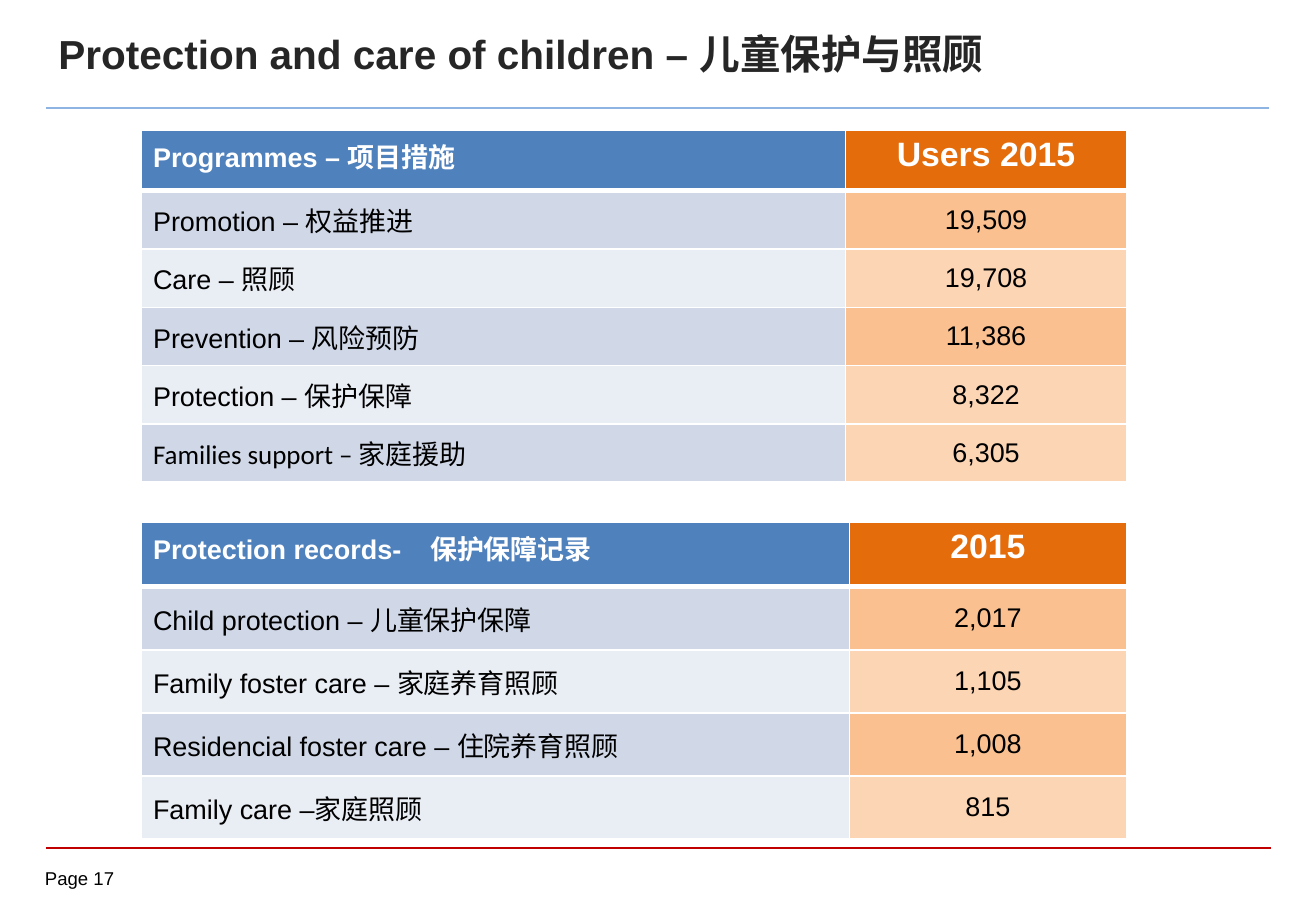
from lxml import etree
from pptx import Presentation
from pptx.dml.color import RGBColor
from pptx.enum import shapes, text
from pptx.oxml import ns
from pptx.util import Inches, Pt

WHITE = RGBColor(0xFF, 0xFF, 0xFF)
BLACK = RGBColor(0, 0, 0)
TITLE_GREY = RGBColor(0x26, 0x26, 0x26)
RED = RGBColor(0xC0, 0, 0)
LIGHT_BLUE = RGBColor(0x8E, 0xB4, 0xE3)
BLUE = RGBColor(0x4F, 0x81, 0xBD)
ORANGE = RGBColor(0xE4, 0x6C, 0x0A)
BLUE_BANDS = (RGBColor(0xD0, 0xD8, 0xE8), RGBColor(0xE9, 0xED, 0xF4))
DARK_PEACH = RGBColor(0xFA, 0xC0, 0x90)
PALE_PEACH = RGBColor(0xFC, 0xD5, 0xB5)
PEACH_BANDS = (DARK_PEACH, PALE_PEACH, DARK_PEACH, PALE_PEACH, PALE_PEACH)

PROGRAMMES = [
    ("Programmes – 项目措施", "Users 2015"),
    ("Promotion – 权益推进", "19,509"),
    ("Care – 照顾", "19,708"),
    ("Prevention – 风险预防", "11,386"),
    ("Protection – 保护保障", "8,322"),
    ("Families support – 家庭援助", "6,305"),
]
RECORDS = [
    ("Protection records-\t保护保障记录", "2015"),
    ("Child protection – 儿童保护保障", "2,017"),
    ("Family foster care – 家庭养育照顾", "1,105"),
    ("Residencial foster care – 住院养育照顾", "1,008"),
    ("Family care –家庭照顾", "815"),
]


def write_text(frame, content, size=16, color=BLACK, bold=False, font="Arial",
               align=text.PP_ALIGN.LEFT, tab=None):
    paragraph = frame.paragraphs[0]
    paragraph.alignment = align
    if tab is not None:
        properties = paragraph._p.get_or_add_pPr()
        tabs = etree.SubElement(properties, ns.qn("a:tabLst"))
        etree.SubElement(tabs, ns.qn("a:tab"), pos=str(tab), algn="l")
    run = paragraph.add_run()
    run.text = content
    run.font.name = font
    run.font.size = Pt(size)
    run.font.bold = bold
    run.font.color.rgb = color


def add_rule(slide, right, top, color, width):
    line = slide.shapes.add_connector(
        shapes.MSO_CONNECTOR.STRAIGHT,
        Inches(0.38), Inches(top), Inches(right), Inches(top))
    line.line.color.rgb = color
    line.line.width = Pt(width)
    etree.SubElement(line._element.spPr, ns.qn("a:effectLst"))


def add_title(slide, content):
    title = slide.shapes.title
    title.left, title.top = Inches(0.38), Inches(0.19)
    title.width, title.height = Inches(8.11), Inches(0.71)
    title.text_frame.vertical_anchor = text.MSO_ANCHOR.TOP
    write_text(title.text_frame, content, size=24, color=TITLE_GREY, bold=True)


def add_page_label(slide, content):
    label = slide.shapes.add_textbox(
        Inches(0.37), Inches(7.14), Inches(0.73), Inches(0.22))
    frame = label.text_frame
    frame.margin_left = frame.margin_right = 0
    frame.margin_top = frame.margin_bottom = 0
    write_text(frame, content, size=11)


def set_borders(cell, **widths):
    properties = cell._tc.get_or_add_tcPr()
    for side in "LRTB":
        line = etree.SubElement(properties, ns.qn(f"a:ln{side}"),
                                w=str(Pt(widths.get(side, 1))))
        fill = etree.SubElement(line, ns.qn("a:solidFill"))
        etree.SubElement(fill, ns.qn("a:srgbClr"), val=str(WHITE))


def format_cell(cell, fill, borders):
    set_borders(cell, **borders)
    cell.fill.solid()
    cell.fill.fore_color.rgb = fill


def add_data_table(slide, rows, top, column_widths, header_height, row_height):
    height = header_height + row_height * (len(rows) - 1)
    table = slide.shapes.add_table(
        len(rows), 2, Inches(1.16), Inches(top),
        Inches(sum(column_widths)), Inches(height)).table
    for column, width in zip(table.columns, column_widths):
        column.width = Inches(width)
    for index, (name, value) in enumerate(rows):
        name_cell, value_cell = table.cell(index, 0), table.cell(index, 1)
        if index == 0:
            table.rows[index].height = Inches(header_height)
            fills, borders = (BLUE, ORANGE), {"B": 3}
            style, value_size = {"color": WHITE, "bold": True}, 20
            anchor = text.MSO_ANCHOR.TOP
        else:
            table.rows[index].height = Inches(row_height)
            fills = BLUE_BANDS[(index - 1) % 2], PEACH_BANDS[index - 1]
            borders = {"T": 3} if index == 1 else {}
            style, value_size = {}, 16
            anchor = text.MSO_ANCHOR.MIDDLE
        for cell, fill in zip((name_cell, value_cell), fills):
            format_cell(cell, fill, borders)
            cell.vertical_anchor = anchor
        font = "Calibri" if name.startswith("Families") else "Arial"
        tab = Inches(2.28) if "\t" in name else None
        write_text(name_cell.text_frame, name, font=font, tab=tab, **style)
        write_text(value_cell.text_frame, value, size=value_size,
                   align=text.PP_ALIGN.CENTER, **style)


def main():
    presentation = Presentation()
    presentation.slide_width = Inches(10.83)
    presentation.slide_height = Inches(7.5)
    slide = presentation.slides.add_slide(presentation.slide_layouts[5])
    add_rule(slide, 10.46, 6.98, RED, 1)
    add_rule(slide, 10.44, 0.89, LIGHT_BLUE, 1.5)
    add_page_label(slide, "Page 17")
    add_title(slide, "Protection and care of children – 儿童保护与照顾")
    add_data_table(slide, PROGRAMMES, 1.07, (5.8, 2.31), 0.5, 0.48)
    add_data_table(slide, RECORDS, 4.3, (5.83, 2.28), 0.53, 0.52)
    presentation.save("out.pptx")


if __name__ == "__main__":
    main()
